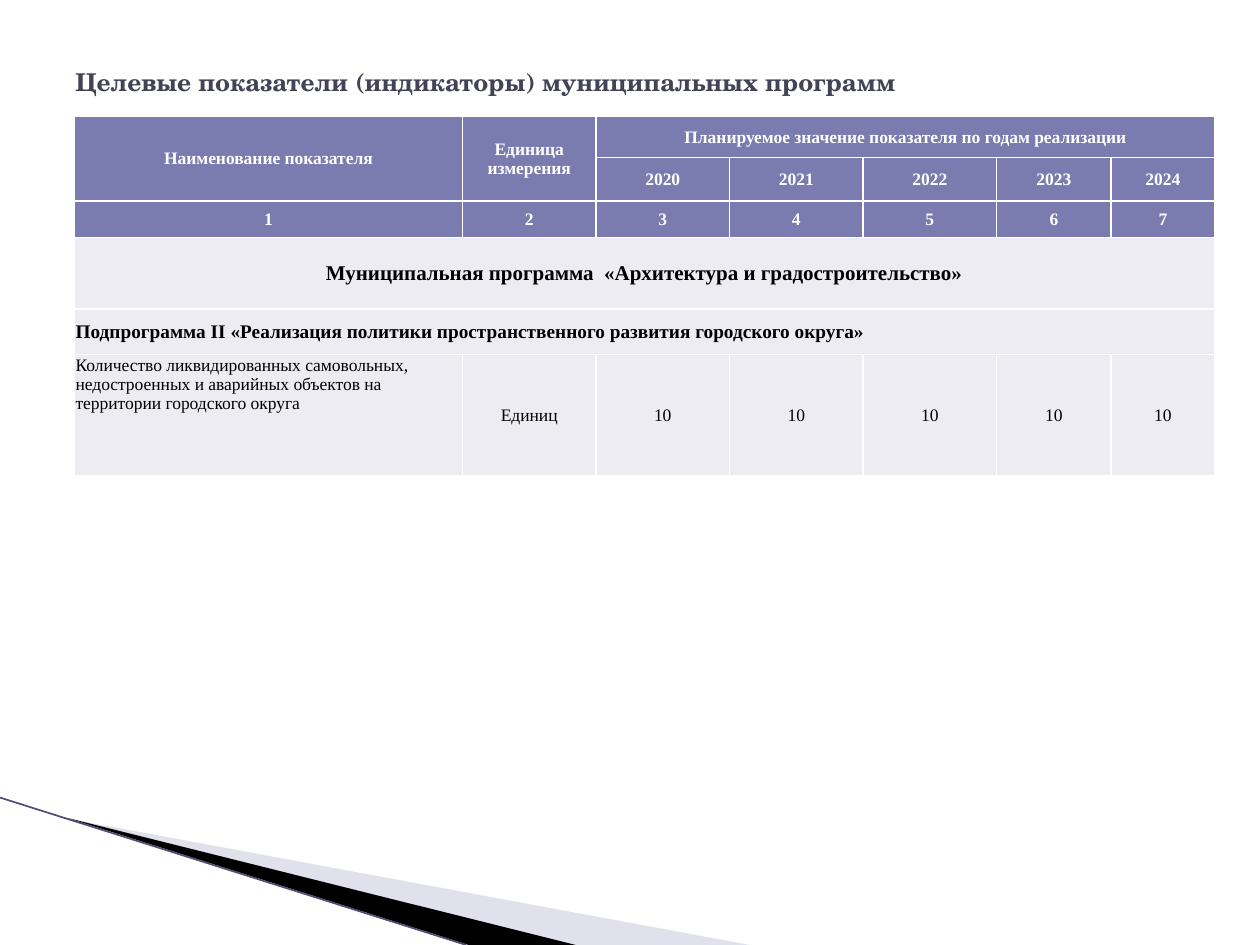
import pptx
import pptx.dml.color
import pptx.enum.text
import pptx.oxml
import pptx.oxml.ns
import pptx.util
from pptx.util import Inches

COLORS = {
    "title": "424456", "header": "7A7BAE", "body": "ECECF2", "white": "FFFFFF",
    "black": "000000", "wedge": "B6B6D1", "edge": "4F4C75",
}
ALIGN = pptx.enum.text.PP_ALIGN
ANCHOR = pptx.enum.text.MSO_ANCHOR
YEARS = ["2020", "2021", "2022", "2023", "2024"]
COLUMN_WIDTHS = [3.08, 1.06, 1.06, 1.06, 1.06, 0.91, 0.82]
ROW_HEIGHTS = [0.33, 0.32, 0.29, 0.57, 0.36, 0.96]


def rgb(name):
    return pptx.dml.color.RGBColor.from_string(COLORS[name])


def write_text(frame, text, size=10, font="Times New Roman", color="black",
               bold=False, align=ALIGN.LEFT):
    paragraph = frame.paragraphs[0]
    paragraph.alignment = align
    run = paragraph.add_run()
    run.text = text
    run.font.size = pptx.util.Pt(size)
    run.font.name = font
    run.font.bold = bold
    run.font.color.rgb = rgb(color)


def add_wedge(slide, left, top, points, color, opacity=100):
    corners = [(left + Inches(x), top + Inches(y)) for x, y in points]
    builder = slide.shapes.build_freeform(*corners[0], scale=1.0)
    builder.add_line_segments(corners[1:], close=True)
    wedge = builder.convert_to_shape()
    wedge.shadow.inherit = False
    wedge.line.fill.background()
    wedge.fill.solid()
    wedge.fill.fore_color.rgb = rgb(color)
    if opacity < 100:
        fill_color = wedge.fill._xPr.find(".//" + pptx.oxml.ns.qn("a:srgbClr"))
        alpha = fill_color.makeelement(pptx.oxml.ns.qn("a:alpha"), {"val": str(opacity * 1000)})
        fill_color.append(alpha)


def add_corner_decoration(slide, left, top, width, height):
    # Pale and black wedges run from the left edge to the bottom
    add_wedge(slide, left, top, [(0.55, 0.17), (5.95, 1.17), (4.56, 1.17)], "wedge", 40)
    add_wedge(slide, left, top, [(0.53, 0.16), (4.57, 1.17), (3.72, 1.17)], "black")
    # Thin line along the lower side
    edge = slide.shapes.add_connector(
        pptx.enum.shapes.MSO_CONNECTOR.STRAIGHT, left, top, left + width, top + height)
    edge.line.color.rgb = rgb("edge")
    edge.line.width = pptx.util.Pt(0.95)
    properties = edge._element.spPr
    properties.append(properties.makeelement(pptx.oxml.ns.qn("a:effectLst"), {}))


def add_title(slide, left, top, width, height):
    frame = slide.shapes.add_textbox(left, top, width, height).text_frame
    frame.word_wrap = True
    frame.vertical_anchor = ANCHOR.MIDDLE
    write_text(frame, "Целевые показатели (индикаторы) муниципальных программ",
               size=14, font="TeX Gyre Schola", color="title", bold=True)


def style_cell(cell, fill):
    cell.margin_left = cell.margin_right = cell.margin_top = Inches(0.01)
    cell.margin_bottom = 0
    cell.vertical_anchor = ANCHOR.MIDDLE
    properties = cell._tc.get_or_add_tcPr()
    for side in ("lnL", "lnR", "lnT", "lnB"):
        properties.append(pptx.oxml.parse_xml(
            f'<a:{side} {pptx.oxml.ns.nsdecls("a")} w="12700"><a:solidFill>'
            f'<a:srgbClr val="{COLORS["white"]}"/></a:solidFill></a:{side}>'))
    cell.fill.solid()
    cell.fill.fore_color.rgb = rgb(fill)


def add_indicator_table(slide, left, top, width, height):
    table = slide.shapes.add_table(
        len(ROW_HEIGHTS), len(COLUMN_WIDTHS), left, top, width, height).table
    for column, column_width in zip(table.columns, COLUMN_WIDTHS):
        column.width = Inches(column_width)
    for row_index, (row, row_height) in enumerate(zip(table.rows, ROW_HEIGHTS)):
        row.height = Inches(row_height)
        for cell in row.cells:
            style_cell(cell, "header" if row_index < 3 else "body")

    # Merged areas: first and last cell
    for first, last in [((0, 0), (1, 0)), ((0, 1), (1, 1)), ((0, 2), (0, 6)),
                        ((3, 0), (3, 6)), ((4, 0), (4, 6))]:
        table.cell(*first).merge(table.cell(*last))

    # Header rows
    header_rows = [
        ["Наименование показателя", "Единица измерения",
         "Планируемое значение показателя по годам реализации"],
        [None, None] + YEARS,
        [str(number + 1) for number in range(len(COLUMN_WIDTHS))],
    ]
    for row_index, texts in enumerate(header_rows):
        for column_index, text in enumerate(texts):
            if text:
                write_text(table.cell(row_index, column_index).text_frame, text,
                           color="white", bold=True, align=ALIGN.CENTER)

    # Programme and subprogramme headings
    write_text(table.cell(3, 0).text_frame,
               "Муниципальная программа  «Архитектура и градостроительство»",
               size=12, bold=True, align=ALIGN.CENTER)
    write_text(table.cell(4, 0).text_frame,
               "Подпрограмма II «Реализация политики пространственного развития "
               "городского округа»", size=11, bold=True)

    # Indicator and its yearly values
    indicator = table.cell(5, 0)
    indicator.vertical_anchor = ANCHOR.TOP
    write_text(indicator.text_frame,
               "Количество ликвидированных самовольных, недостроенных и аварийных "
               "объектов на территории городского округа")
    for column_index, text in enumerate(["Единиц"] + ["10"] * len(YEARS), start=1):
        write_text(table.cell(5, column_index).text_frame, text, align=ALIGN.CENTER)


def main():
    presentation = pptx.Presentation()
    presentation.slide_width = Inches(10)
    presentation.slide_height = Inches(7.5)
    slide = presentation.slides.add_slide(presentation.slide_layouts[6])
    add_corner_decoration(slide, Inches(0), Inches(6.33), Inches(3.7), Inches(1.17))
    add_title(slide, Inches(0.5), Inches(0.3), Inches(9), Inches(0.69))
    add_indicator_table(slide, Inches(0.59), Inches(0.92),
                        Inches(sum(COLUMN_WIDTHS)), Inches(sum(ROW_HEIGHTS)))
    presentation.save("out.pptx")


if __name__ == "__main__":
    main()
